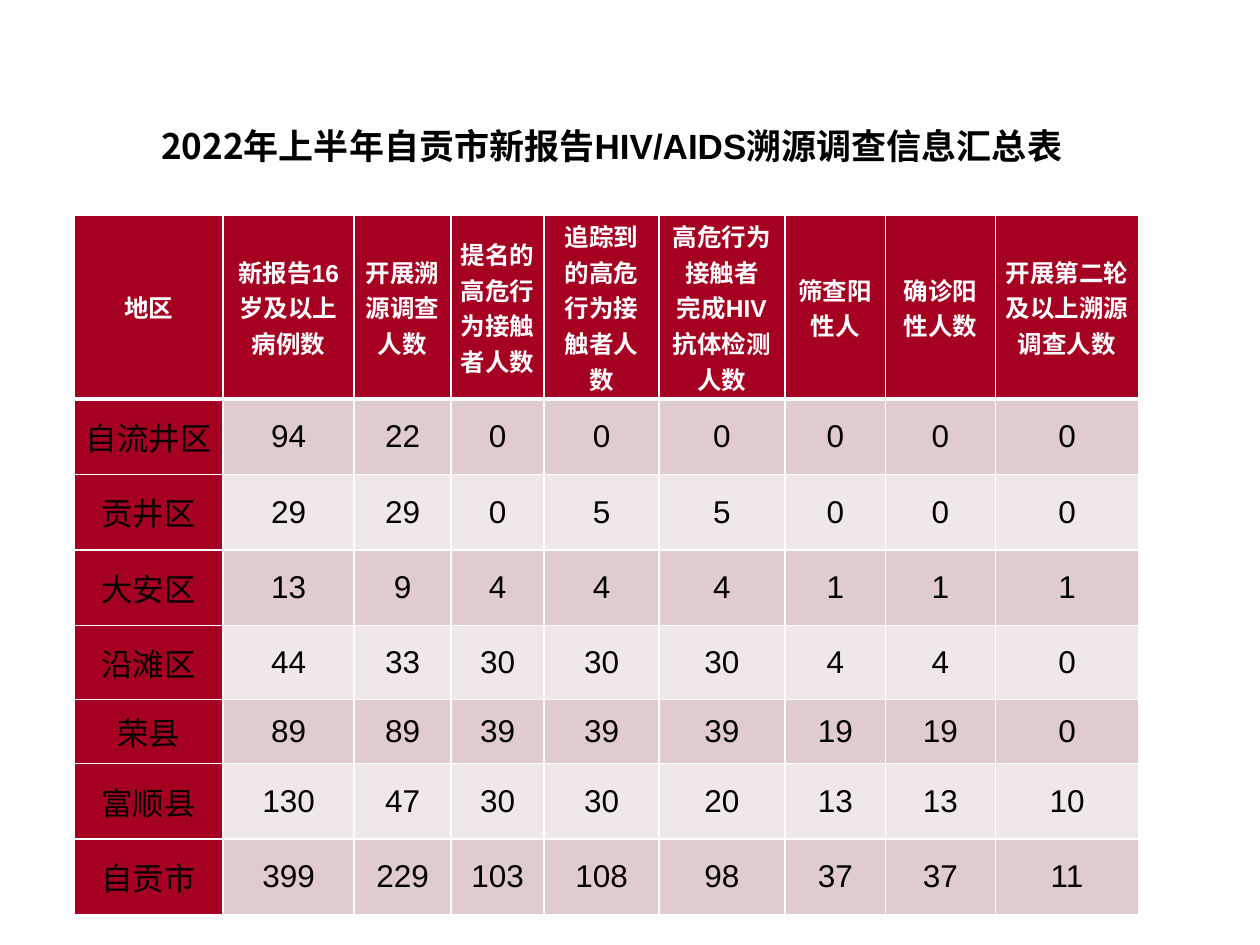
from lxml import etree
from pptx import Presentation
from pptx import util as u
from pptx.dml.color import RGBColor
from pptx.enum import text
from pptx.oxml import ns

SLIDE_W, SLIDE_H = 10, 7.5
RED, WHITE, BLACK = "A50021", "FFFFFF", "000000"
BANDS = ("E1CCCD", "F0E7E8")
CJK_FONT = "Noto Sans CJK SC"
COL_WIDTHS = (1.18, 1.04, 0.77, 0.74, 0.91, 1, 0.8, 0.87, 1.14)
ROW_HEIGHTS = (1.46, 0.6, 0.6, 0.6, 0.59, 0.51, 0.6, 0.6)
WIDE_INSET_COLS = (4, 5)

HEADERS = ("地区", "新报告16岁及以上病例数", "开展溯源调查人数",
           "提名的高危行为接触者人数", "追踪到的高危行为接触者人数",
           "高危行为接触者\n完成HIV抗体检测人数", "筛查阳性人", "确诊阳性人数",
           "开展第二轮及以上溯源调查人数")
DISTRICTS = (
    ("自流井区", 94, 22, 0, 0, 0, 0, 0, 0),
    ("贡井区", 29, 29, 0, 5, 5, 0, 0, 0),
    ("大安区", 13, 9, 4, 4, 4, 1, 1, 1),
    ("沿滩区", 44, 33, 30, 30, 30, 4, 4, 0),
    ("荣县", 89, 89, 39, 39, 39, 19, 19, 0),
    ("富顺县", 130, 47, 30, 30, 20, 13, 13, 10),
    ("自贡市", 399, 229, 103, 108, 98, 37, 37, 11),
)


def rgb(value):
    return RGBColor.from_string(value)


def format_run(r, size, color, bold, font="Arial"):
    r.font.name, r.font.size, r.font.bold = font, u.Pt(size), bold
    r.font.color.rgb = rgb(color)
    ea = etree.SubElement(r.font._element, ns.qn("a:ea"))
    ea.set("typeface", CJK_FONT)


def set_borders(cell, bottom):
    """Draw white cell borders, with the bottom one of the given points."""
    tc_pr = cell._tc.get_or_add_tcPr()
    for i, (side, width) in enumerate(zip("LRTB", (1, 1, 1, bottom))):
        ln = etree.Element(ns.qn(f"a:ln{side}"), w=str(u.Pt(width)))
        fill = etree.SubElement(ln, ns.qn("a:solidFill"))
        etree.SubElement(fill, ns.qn("a:srgbClr"), val=WHITE)
        tc_pr.insert(i, ln)


def fill_cell(cell, value, row, col):
    header = row == 0
    cell.text = str(value)
    cell.vertical_anchor = text.MSO_ANCHOR.MIDDLE
    wide = col in WIDE_INSET_COLS
    cell.margin_left = cell.margin_right = u.Inches(0.1 if wide else 0.07)
    cell.margin_top = cell.margin_bottom = 0
    cell.fill.solid()
    cell.fill.fore_color.rgb = rgb(
        RED if header or col == 0 else BANDS[(row - 1) % 2])
    set_borders(cell, 3 if header else 1)
    for p in cell.text_frame.paragraphs:
        p.alignment = text.PP_ALIGN.CENTER
        for r in p.runs:
            format_run(r, 14 if header else 18, WHITE if header else BLACK, header)


def add_title(s, left, top, width, height):
    sp = s.shapes.title
    sp.left, sp.top, sp.width, sp.height = map(u.Inches, (left, top, width, height))
    tf = sp.text_frame
    tf.word_wrap = True
    tf.vertical_anchor = text.MSO_ANCHOR.TOP
    p = tf.paragraphs[0]
    p.alignment = text.PP_ALIGN.CENTER
    for words, font in (("2022年上半年", CJK_FONT),
                        ("自贡市新报告HIV/AIDS溯源调查信息汇总表", "Arial")):
        r = p.add_run()
        r.text = words
        format_run(r, 20, BLACK, True, font)


def add_summary_table(s, left, top, width, height):
    """Share the box among columns and rows in proportion to their sizes."""
    rows = (HEADERS,) + DISTRICTS
    table = s.shapes.add_table(len(rows), len(HEADERS),
                               *map(u.Inches, (left, top, width, height))).table
    for column, share in zip(table.columns, COL_WIDTHS):
        column.width = u.Inches(width * share / sum(COL_WIDTHS))
    for i, (row, share) in enumerate(zip(table.rows, ROW_HEIGHTS)):
        row.height = u.Inches(height * share / sum(ROW_HEIGHTS))
        for j, value in enumerate(rows[i]):
            fill_cell(table.cell(i, j), value, i, j)


def main():
    prs = Presentation()
    prs.slide_width, prs.slide_height = u.Inches(SLIDE_W), u.Inches(SLIDE_H)
    s = prs.slides.add_slide(prs.slide_layouts[5])
    add_summary_table(s, 0.59, 1.71, 8.45, 5.55)
    add_title(s, 0.77, 0.94, 8.17, 0.44)
    prs.save("out.pptx")


if __name__ == "__main__":
    main()
